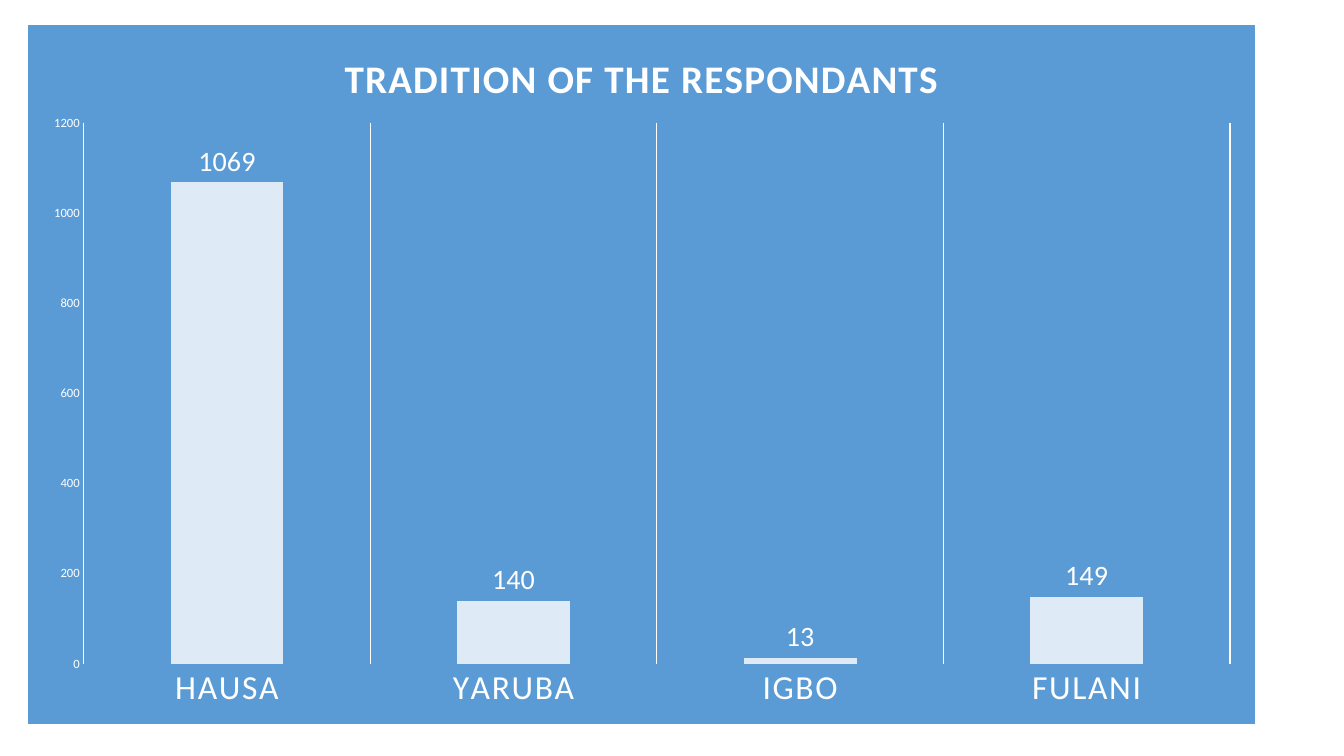
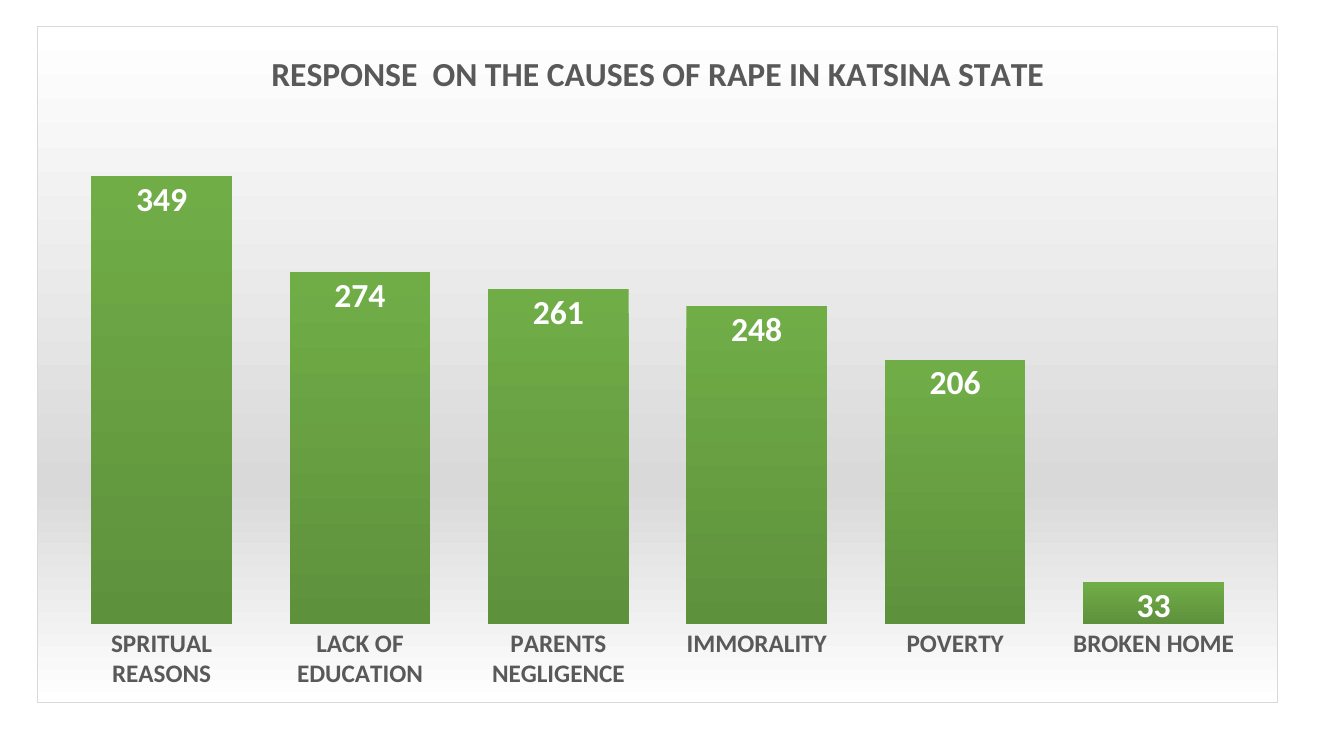
from dataclasses import dataclass
from typing import Optional

from pptx import Presentation
from pptx.chart import data as chart_data
from pptx.dml import color
from pptx.enum import chart as ce
from pptx.oxml import ns, parse_xml
from pptx.util import Pt

FONT = "Calibri"
WHITE = "FFFFFF"
GREY = "595959"
PALE_GREY = "D9D9D9"
BLUE = "5B9BD5"
PALE_BLUE = "DEEBF7"

Stops = tuple[tuple[int, str], ...]


@dataclass(frozen=True)
class Box:
    left: float
    top: float
    width: float
    height: float


@dataclass(frozen=True)
class BarSlide:
    title: str
    responses: dict[str, int]
    frame: Box
    plot: Box  # fractions of the frame
    panel: Stops
    border: str
    bars: Stops
    gap: int
    text_color: str
    title_size: int
    category_size: int
    value_size: int
    value_position: ce.XL_LABEL_POSITION
    bold: bool
    axis_max: int
    axis_size: Optional[int] = None  # None hides the value axis
    divider: Optional[str] = None
    title_spacing: int = 0  # hundredths of a point
    category_spacing: int = 0


SLIDES = (
    BarSlide(
        title="TRADITION OF THE RESPONDANTS",
        responses={"HAUSA": 1069, "YARUBA": 140, "IGBO": 13, "FULANI": 149},
        frame=Box(20, 18, 876.5, 499.5),
        plot=Box(0.045, 0.14, 0.935, 0.774),
        panel=((0, BLUE),),
        border=BLUE,
        bars=((0, PALE_BLUE),),
        gap=154,
        text_color=WHITE,
        title_size=28,
        category_size=24,
        value_size=20,
        value_position=ce.XL_LABEL_POSITION.OUTSIDE_END,
        bold=False,
        axis_max=1200,
        axis_size=9,
        divider=WHITE,
        title_spacing=100,
        category_spacing=120,
    ),
    BarSlide(
        title="RESPONSE  ON THE CAUSES OF RAPE IN KATSINA STATE",
        responses={
            "SPRITUAL REASONS": 349,
            "LACK OF EDUCATION": 274,
            "PARENTS NEGLIGENCE": 261,
            "IMMORALITY": 248,
            "POVERTY": 206,
            "BROKEN HOME": 33,
        },
        frame=Box(26.5, 18.5, 886.5, 484),
        plot=Box(0.02, 0.124, 0.96, 0.76),
        panel=((0, WHITE), (68, PALE_GREY), (100, WHITE)),
        border=PALE_GREY,
        bars=((0, "70AD47"), (100, "5E913C")),
        gap=41,
        text_color=GREY,
        title_size=24,
        category_size=18,
        value_size=24,
        value_position=ce.XL_LABEL_POSITION.INSIDE_END,
        bold=True,
        axis_max=400,
    ),
)


def rgb(hex_color: str) -> color.RGBColor:
    return color.RGBColor.from_string(hex_color)


def set_font(font, size: float, hex_color: str, bold: bool = False) -> None:
    font.name = FONT
    font.size = Pt(size)
    font.bold = bold
    font.color.rgb = rgb(hex_color)


def fill_xml(stops: Stops) -> str:
    """One stop gives a solid fill, several a gradient from top to bottom."""
    if len(stops) == 1:
        return f'<a:solidFill><a:srgbClr val="{stops[0][1]}"/></a:solidFill>'
    marks = "".join(
        f'<a:gs pos="{percent * 1000}"><a:srgbClr val="{hex_color}"/></a:gs>'
        for percent, hex_color in stops
    )
    return f'<a:gradFill><a:gsLst>{marks}</a:gsLst><a:lin ang="5400000" scaled="0"/></a:gradFill>'


def shape_properties(stops: Stops, border: Optional[str] = None):
    line = fill_xml(((0, border),)) if border else "<a:noFill/>"
    return parse_xml(
        f'<c:spPr {ns.nsdecls("c", "a")}>{fill_xml(stops)}'
        f'<a:ln w="{Pt(0.75)}">{line}</a:ln></c:spPr>'
    )


def place_plot(chart, plot: Box) -> None:
    plot_area = chart.element.xpath("c:chart/c:plotArea")[0]
    for automatic in plot_area.xpath("c:layout"):
        plot_area.remove(automatic)
    places = {"x": plot.left, "y": plot.top, "w": plot.width, "h": plot.height}
    entries = "".join(f'<c:{side} val="{value}"/>' for side, value in places.items())
    plot_area.insert(0, parse_xml(
        f'<c:layout {ns.nsdecls("c")}><c:manualLayout><c:layoutTarget val="inner"/>'
        f'<c:xMode val="edge"/><c:yMode val="edge"/>{entries}</c:manualLayout></c:layout>'
    ))


def space_letters(chart, parent: str, spacing: int) -> None:
    for properties in chart.element.xpath(f".//c:{parent}//a:defRPr"):
        properties.set("spc", str(spacing))


def style_axes(chart, content: BarSlide) -> None:
    categories, values = chart.category_axis, chart.value_axis
    for axis in (categories, values):
        axis.major_tick_mark = axis.minor_tick_mark = ce.XL_TICK_MARK.NONE
        axis.format.line.fill.background()
        axis.has_major_gridlines = False
    set_font(categories.tick_labels.font, content.category_size, content.text_color, content.bold)
    if content.divider:
        divider = categories.major_gridlines.format.line
        divider.color.rgb = rgb(content.divider)
        divider.width = Pt(0.75)
    values.minimum_scale, values.maximum_scale = 0, content.axis_max
    if content.axis_size:
        set_font(values.tick_labels.font, content.axis_size, content.text_color)
    else:
        values.visible = False


def style_bars(chart, content: BarSlide) -> None:
    bars = chart.plots[0]
    bars.gap_width = content.gap
    bars.vary_by_categories = False
    bars.has_data_labels = True
    labels = bars.data_labels
    labels.show_value = True
    labels.position = content.value_position
    set_font(labels.font, content.value_size, WHITE, content.bold)
    series = chart.element.xpath(".//c:ser")[0]
    blank = series.get_or_add_spPr()
    series.replace(blank, shape_properties(content.bars))


def add_bar_slide(deck, content: BarSlide) -> None:
    slide = deck.slides.add_slide(deck.slide_layouts[6])
    table = chart_data.CategoryChartData()
    table.categories = list(content.responses)
    table.add_series("Series 1", list(content.responses.values()))
    frame = content.frame
    chart = slide.shapes.add_chart(
        ce.XL_CHART_TYPE.COLUMN_CLUSTERED,
        Pt(frame.left), Pt(frame.top), Pt(frame.width), Pt(frame.height), table,
    ).chart
    chart.has_legend = False
    set_font(chart.font, 10, "000000")
    chart.has_title = True
    chart.chart_title.include_in_layout = False
    heading = chart.chart_title.text_frame
    heading.text = content.title
    set_font(heading.paragraphs[0].font, content.title_size, content.text_color, bold=True)
    style_axes(chart, content)
    style_bars(chart, content)
    place_plot(chart, content.plot)
    space_letters(chart, "title", content.title_spacing)
    space_letters(chart, "catAx", content.category_spacing)
    chart.element.xpath("c:chart")[0].addnext(shape_properties(content.panel, content.border))


def main() -> None:
    deck = Presentation()
    deck.slide_width, deck.slide_height = Pt(960), Pt(540)
    for content in SLIDES:
        add_bar_slide(deck, content)
    deck.save("out.pptx")


if __name__ == "__main__":
    main()
